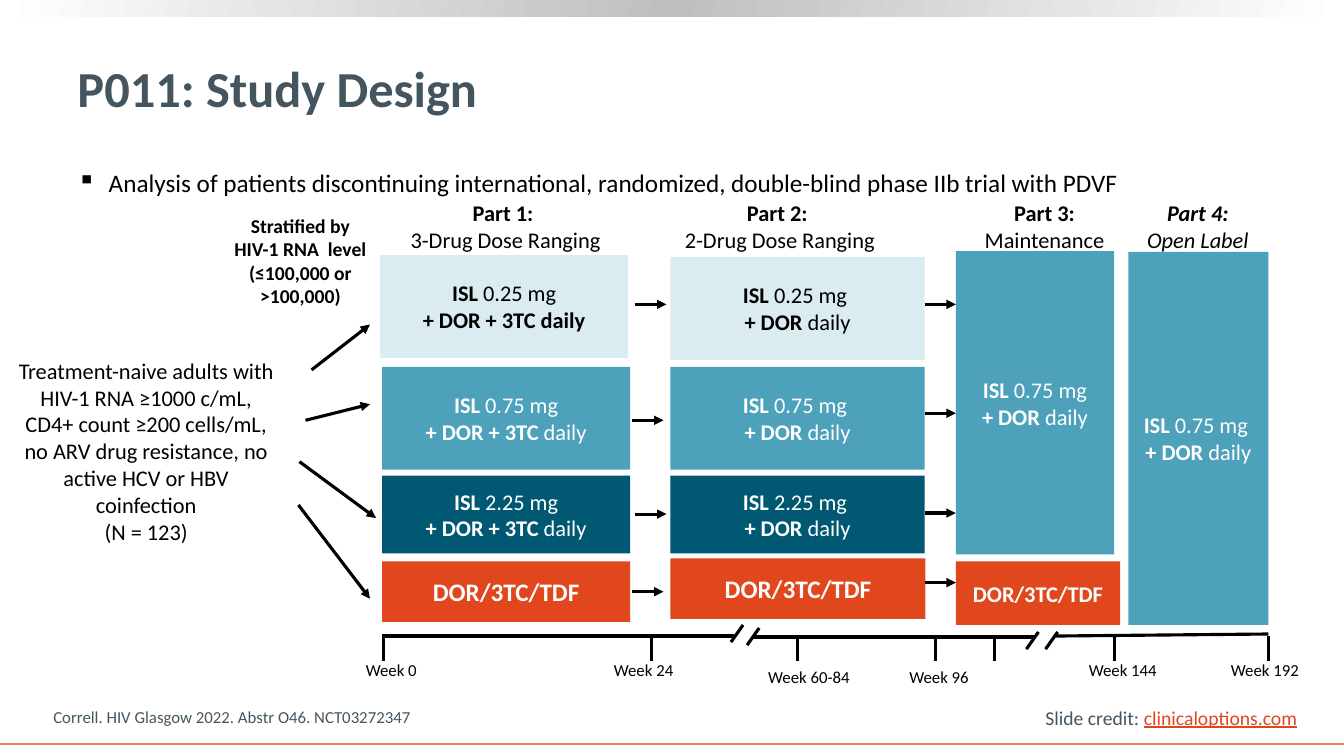
from copy import deepcopy
from dataclasses import dataclass

from lxml import etree
from pptx import Presentation
from pptx.dml.color import RGBColor
from pptx.enum.shapes import MSO_CONNECTOR, MSO_SHAPE
from pptx.enum.text import MSO_ANCHOR, PP_ALIGN
from pptx.oxml.ns import qn
from pptx.util import Inches, Pt

RECTANGLE = MSO_SHAPE.RECTANGLE
STRAIGHT = MSO_CONNECTOR.STRAIGHT
LEFT, CENTER = PP_ALIGN.LEFT, PP_ALIGN.CENTER
TOP, MIDDLE, BOTTOM = MSO_ANCHOR.TOP, MSO_ANCHOR.MIDDLE, MSO_ANCHOR.BOTTOM


@dataclass(frozen=True)
class Theme:
    font: str = "Calibri"
    slate: str = "455560"
    black: str = "000000"
    white: str = "FFFFFF"
    silver: str = "BFBFBF"
    pale: str = "DBECF1"
    teal: str = "4DA1BB"
    navy: str = "015873"
    orange: str = "E1471D"
    coral: str = "F47D55"
    title: int = 36
    lead: int = 18
    body: int = 16
    note: int = 14
    small: int = 12
    rule: float = 1.5
    stroke: float = 2.25


THEME = Theme()


def rgb(color):
    return RGBColor.from_string(color)


def write_lines(frame, lines, size, color, align, italic=False):
    """Write one paragraph per line; text between ** marks is bold."""
    for index, line in enumerate(lines):
        para = frame.paragraphs[0] if index == 0 else frame.add_paragraph()
        para.alignment = align
        para.font.name = THEME.font
        para.font.size = Pt(size)
        para.font.color.rgb = rgb(color)
        para.font.italic = italic
        for part, text in enumerate(line.split("**")):
            if text:
                span = para.add_run()
                span.text = text
                span.font.bold = part % 2 == 1


def add_text(page, place, lines, size, color=THEME.black, align=LEFT,
             anchor=TOP, wrap=True, italic=False):
    box = page.shapes.add_textbox(*map(Inches, place))
    frame = box.text_frame
    frame.word_wrap = wrap
    frame.vertical_anchor = anchor
    write_lines(frame, lines, size, color, align, italic)
    return frame


def add_block(page, place, fill, lines=(), size=THEME.body, color=THEME.white):
    block = page.shapes.add_shape(RECTANGLE, *map(Inches, place))
    block.shadow.inherit = False
    block.fill.solid()
    block.fill.fore_color.rgb = rgb(fill)
    block.line.fill.background()
    block.text_frame.word_wrap = False
    block.text_frame.vertical_anchor = MIDDLE
    write_lines(block.text_frame, lines, size, color, CENTER)
    return block


def add_line(page, start, end, color=THEME.black, width=THEME.stroke, arrow=False):
    line = page.shapes.add_connector(STRAIGHT, *map(Inches, (*start, *end)))
    line.line.color.rgb = rgb(color)
    line.line.width = Pt(width)
    if arrow:
        etree.SubElement(line.line._get_or_add_ln(), qn("a:tailEnd"), type="triangle")
    etree.SubElement(line._element.spPr, qn("a:effectLst"))


def add_frame(page):
    """Grey band at the top and thin rule at the bottom."""
    band = add_block(page, (0, 0, 13.33, 0.16), THEME.silver)
    band.fill.gradient()
    band.fill.gradient_angle = 170
    stop_list = band._element.spPr.find(qn("a:gradFill")).find(qn("a:gsLst"))
    stop_list.append(deepcopy(stop_list[-1]))
    colors = (THEME.white, THEME.silver, THEME.white)
    for stop, position, color in zip(band.fill.gradient_stops, (0, 0.5, 1), colors):
        stop.position = position
        stop.color.rgb = rgb(color)
    add_line(page, (0, 7.38), (13.33, 7.38), THEME.coral, THEME.rule)


def add_lead(page, text):
    frame = add_text(page, (0.67, 1.61, 10.69, 0.4), [""], THEME.lead)
    para = frame.paragraphs[0]
    properties = para._p.get_or_add_pPr()
    properties.set("marL", str(Inches(0.31)))
    properties.set("indent", str(-Inches(0.31)))
    bullet = etree.Element(qn("a:buChar"), char="▪")
    properties.insert(0, bullet)
    para.add_run().text = text


def add_population(page):
    add_text(page, (0.07, 3.49, 2.76, 1.99),
             ["Treatment-naive adults with HIV-1 RNA ≥1000 c/mL, CD4+ count "
              "≥200 cells/mL, no ARV drug resistance, no active HCV or HBV",
              "coinfection", "(N = 123)"], THEME.body, align=CENTER)
    add_text(page, (2.03, 2.07, 1.9, 1.28),
             ["**Stratified by**", "**HIV-1 RNA  level**", "**(≤100,000 or >100,000)**"],
             THEME.note, align=CENTER)
    for start, end in (((3.09, 3.67), (3.67, 3.22)), ((3.03, 4.17), (3.67, 4.01)),
                       ((2.97, 4.58), (3.73, 5.14)), ((2.96, 5.01), (3.67, 5.94))):
        add_line(page, start, end, arrow=True)


def add_part_headings(page):
    for left, width, part, phase in ((3.95, 2.13, "Part 1: ", "3-Drug Dose Ranging"),
                                     (6.67, 2.13, "Part 2: ", "2-Drug Dose Ranging"),
                                     (9.66, 1.4, "Part 3:", "Maintenance"),
                                     (11.27, 1.22, "Part 4:", "Open Label")):
        add_text(page, (left, 1.93, width, 0.64), [f"**{part}**", phase], THEME.body,
                 align=CENTER, wrap=False, italic=part == "Part 4:")


def add_arms(page):
    doses = (
        ("0.25", THEME.pale, THEME.black, (3.77, 2.53), 2.55, 1.02, "**+ DOR + 3TC daily**"),
        ("0.75", THEME.teal, THEME.white, (3.79, 3.64), 3.64, 1.02, "**+ DOR + 3TC **daily"),
        ("2.25", THEME.navy, THEME.white, (3.79, 4.72), 4.72, 0.77, "**+ DOR + 3TC **daily"),
    )
    two_drug = "**+ DOR **daily"
    for dose, fill, color, corner, second_top, height, three_drug in doses:
        add_block(page, (*corner, 2.46, height), fill,
                  [f"**ISL **{dose} mg", three_drug], color=color)
        add_block(page, (6.65, second_top, 2.52, height), fill,
                  [f"**ISL **{dose} mg ", two_drug], color=color)
    add_block(page, (9.48, 2.49, 1.57, 3.01), THEME.teal, ["**ISL **0.75 mg", two_drug])
    add_block(page, (11.19, 2.5, 1.39, 3.7), THEME.teal, ["**ISL **0.75 mg ", two_drug])

    for place, size in (((3.79, 5.57, 2.46, 0.6), THEME.lead),
                        ((6.65, 5.54, 2.53, 0.6), THEME.lead),
                        ((9.48, 5.57, 1.63, 0.63), THEME.body)):
        add_block(page, place, THEME.orange, ["**DOR/3TC/TDF**"], size)

    for left, top in ((6.3, 3.02), (6.27, 4.17), (6.3, 5.1), (6.27, 5.87),
                      (9.17, 3.02), (9.17, 4.1), (9.17, 5.09), (9.17, 5.78)):
        add_line(page, (left, top), (left + 0.31, top), arrow=True)


def add_timeline(page):
    for start, end in (((3.79, 6.31), (7.28, 6.31)), ((7.47, 6.32), (10.27, 6.32)),
                       ((10.47, 6.31), (12.58, 6.29))):
        add_line(page, start, end)
    for tick in (3.8, 6.46, 7.91, 9.28, 9.86, 11.05, 12.58):
        add_line(page, (tick, 6.31), (tick, 6.56))
    for left, top in ((7.25, 6.2), (7.41, 6.23), (10.18, 6.27), (10.37, 6.27)):
        add_line(page, (left + 0.12, top), (left, top + 0.17))
    for left, top, width, week in ((3.53, 6.5, 0.71, "0"), (5.99, 6.5, 0.8, "24"),
                                   (7.52, 6.57, 1.02, "60-84"), (8.92, 6.57, 0.8, "96"),
                                   (10.7, 6.5, 0.89, "144"), (12.11, 6.5, 0.89, "192")):
        add_text(page, (left, top, width, 0.3), [f"Week {week}"], THEME.small, wrap=False)


def add_footer(page):
    add_text(page, (0.43, 6.96, 8.59, 0.3),
             ["Correll. HIV Glasgow 2022. Abstr O46. NCT03272347"],
             THEME.small, THEME.slate, anchor=BOTTOM)
    credit = add_text(page, (10.27, 6.95, 2.72, 0.34), ["Slide credit: "],
                      THEME.note, THEME.slate, wrap=False)
    site = credit.paragraphs[0].add_run()
    site.text = "clinicaloptions.com"
    site.font.underline = True
    site.font.color.rgb = rgb(THEME.orange)


def main():
    deck = Presentation()
    deck.slide_width, deck.slide_height = Inches(13.33), Inches(7.5)
    page = deck.slides.add_slide(deck.slide_layouts[6])
    add_frame(page)
    add_text(page, (0.67, 0.26, 11.89, 1.21), ["**P011: Study Design**"],
             THEME.title, THEME.slate, anchor=MIDDLE)
    add_lead(page, "Analysis of patients discontinuing international, randomized, "
                   "double-blind phase IIb trial with PDVF")
    add_population(page)
    add_part_headings(page)
    add_arms(page)
    add_timeline(page)
    add_footer(page)
    deck.save("out.pptx")


if __name__ == "__main__":
    main()
